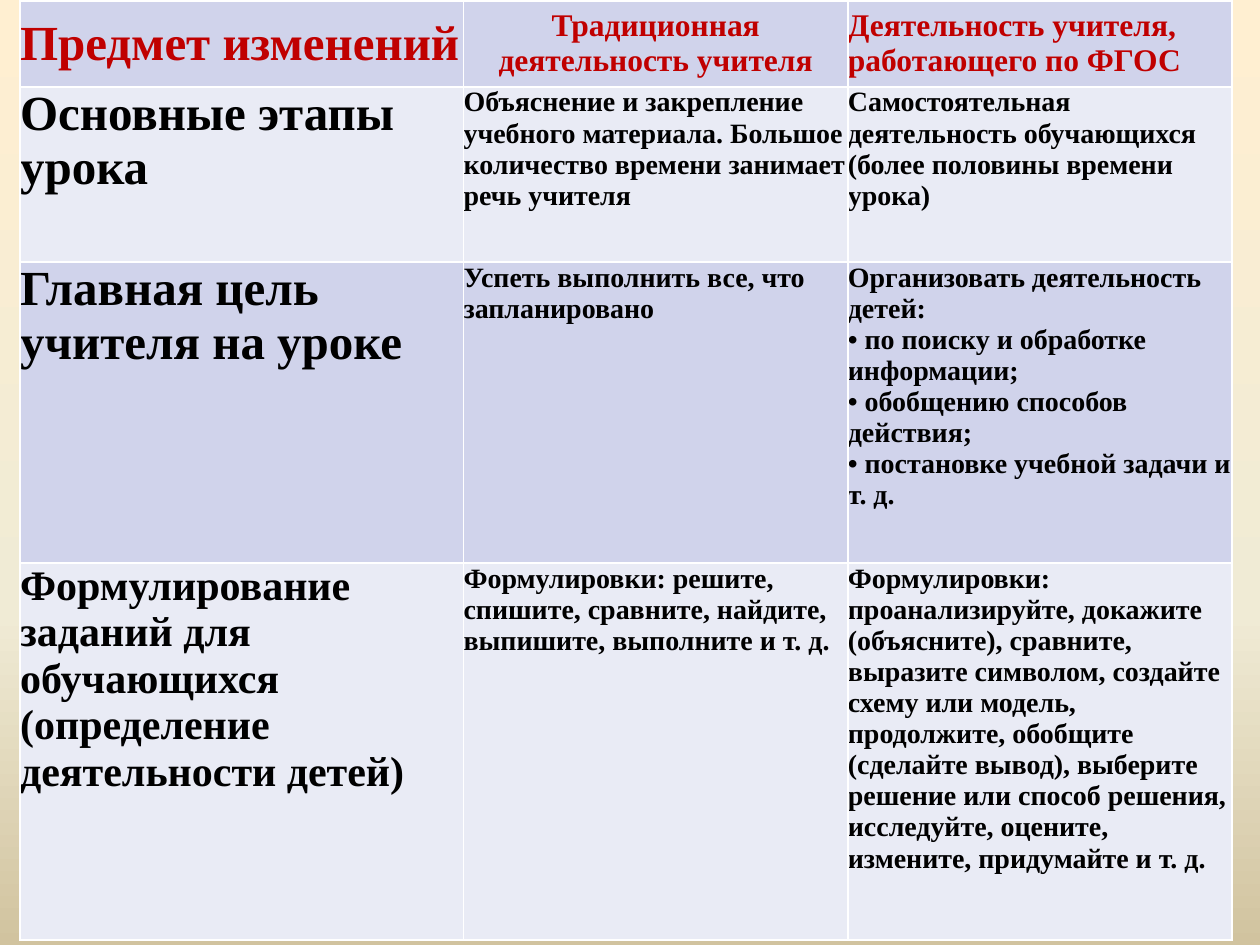
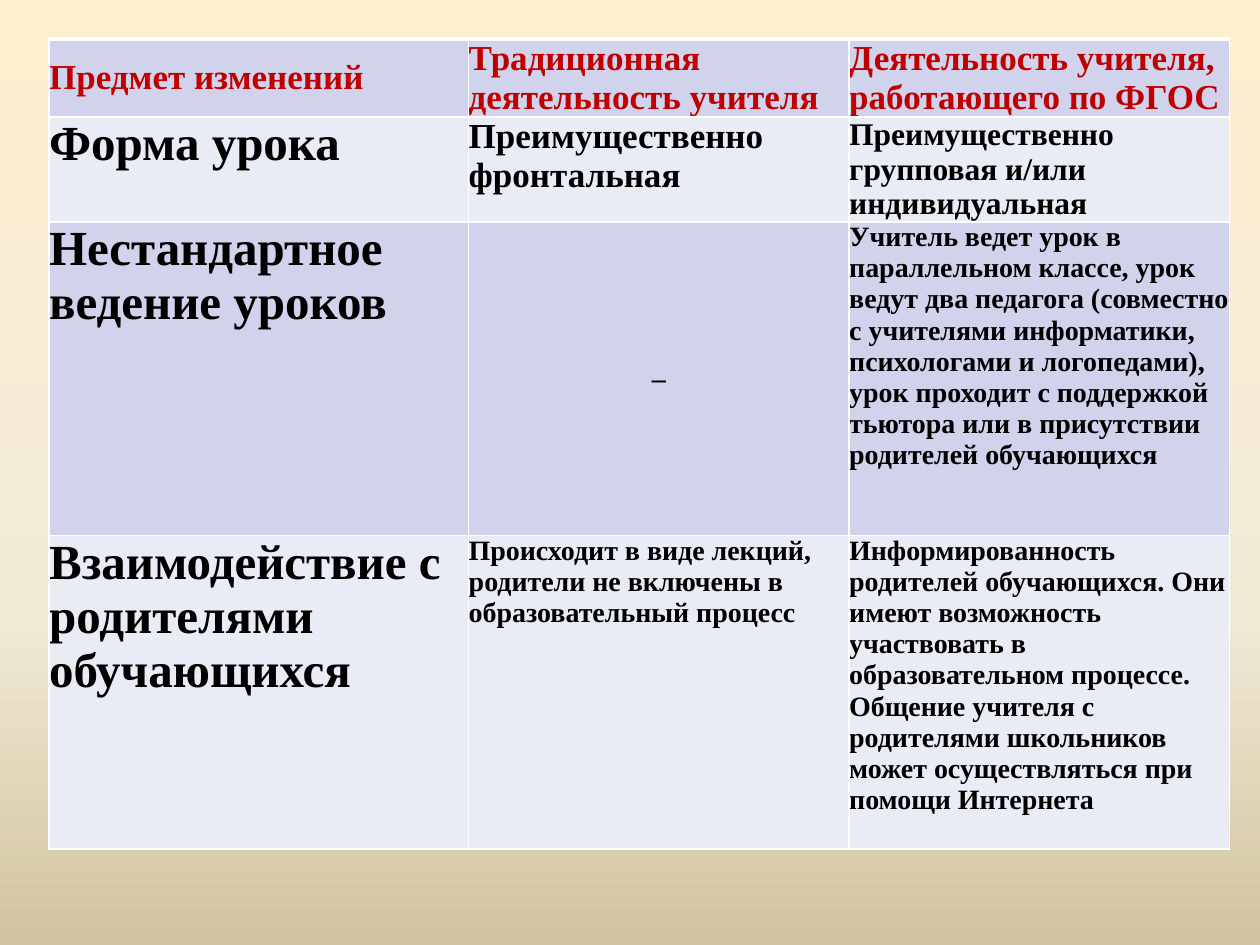
from copy import deepcopy
from dataclasses import dataclass

from pptx import Presentation
from pptx.dml.color import RGBColor
from pptx.enum.text import MSO_ANCHOR as Anchor, PP_ALIGN as Align
from pptx.oxml import parse_xml
from pptx.oxml.ns import nsdecls, qn
from pptx.util import Inches, Pt


@dataclass(frozen=True)
class Theme:
    font: str = "Times New Roman"
    header_text: str = "C00000"
    body_text: str = "000000"
    bands: tuple = ("D0D3EB", "E9EBF5")
    border: str = "FFFFFF"
    border_width: float = 1
    top_border_width: float = 3
    background: tuple = ((0, "FFEFD1"), (0.65, "F0EBD5"), (1, "D1C39F"))
    background_angle: int = 270
    label_size: int = 28
    body_size: int = 16


THEME = Theme()
HEADERS = (
    "Предмет изменений",
    "Традиционная деятельность учителя",
    "Деятельность учителя, работающего по ФГОС",
)

# "sizes" and "centred" list exceptions by (row, column); row 0 is the header.
TABLES = [
    {
        "left": 0.16, "top": 0,
        "columns": (3.52, 3.05, 3.05),
        "heights": (0.69, 1.39, 2.39, 2.99),
        "header_sizes": (28, 18, 18),
        "sizes": {(3, 0): 24},
        "centred": {(0, 1)},
        "rows": [
            ("Основные этапы урока",
             "Объяснение и закрепление учебного материала. Большое количество "
             "времени занимает речь учителя",
             "Самостоятельная деятельность обучающихся (более половины времени урока)"),
            ("Главная цель учителя на уроке",
             "Успеть выполнить все, что запланировано",
             "Организовать деятельность детей:\n"
             "• по поиску и обработке информации;\n"
             "• обобщению способов действия;\n"
             "• постановке учебной задачи и т. д."),
            ("Формулирование заданий для обучающихся (определение деятельности детей)",
             "Формулировки: решите, спишите, сравните, найдите, выпишите, "
             "выполните и т. д.",
             "Формулировки: проанализируйте, докажите (объясните), сравните, "
             "выразите символом, создайте схему или модель, продолжите, обобщите "
             "(сделайте вывод), выберите решение или способ решения, исследуйте, "
             "оцените, измените, придумайте и т. д."),
        ],
    },
    {
        "left": 0.39, "top": 0.31,
        "columns": (3.33, 3.02, 3.02),
        "heights": (0.62, 0.67, 2.49, 2.49),
        "header_sizes": (20, 20, 20),
        "sizes": {(1, 1): 20, (1, 2): 18},
        "centred": {(2, 1)},
        "rows": [
            ("Форма урока",
             "Преимущественно фронтальная",
             "Преимущественно групповая и/или индивидуальная"),
            ("Нестандартное ведение уроков",
             "–",
             "Учитель ведет урок в параллельном классе, урок ведут два педагога "
             "(совместно с учителями информатики, психологами и логопедами), урок "
             "проходит с поддержкой тьютора или в присутствии родителей обучающихся"),
            ("Взаимодействие с родителями обучающихся",
             "Происходит в виде лекций, родители не включены в образовательный процесс",
             "Информированность родителей обучающихся. Они имеют возможность "
             "участвовать в образовательном процессе. Общение учителя с родителями "
             "школьников может осуществляться при помощи Интернета"),
        ],
    },
]


def apply_formats(target, formats):
    for name, value in formats.items():
        setattr(target, name, value)


def paint_background(master):
    fill = master.background.fill
    fill.gradient()
    fill.gradient_angle = THEME.background_angle
    stop_list = next(master.element.iter(qn("a:gsLst")))
    stop_list.append(deepcopy(stop_list[-1]))
    for stop, (position, color) in zip(fill.gradient_stops, THEME.background):
        stop.position = position
        stop.color.rgb = RGBColor.from_string(color)


def add_borders(cell, is_header):
    properties = cell._tc.get_or_add_tcPr()
    for side in ("L", "R", "T", "B"):
        heavy = is_header and side == "T"
        width = Pt(THEME.top_border_width if heavy else THEME.border_width)
        properties.append(parse_xml(
            f'<a:ln{side} {nsdecls("a")} w="{width}"><a:solidFill>'
            f'<a:srgbClr val="{THEME.border}"/></a:solidFill></a:ln{side}>'))


def fill_cell(cell, text, size, row, centred):
    is_header = row == 0
    add_borders(cell, is_header)
    cell.fill.solid()
    cell.fill.fore_color.rgb = RGBColor.from_string(THEME.bands[row % 2])
    apply_formats(cell, {
        "margin_left": 0, "margin_right": 0, "margin_top": 0, "margin_bottom": 0,
        "vertical_anchor": Anchor.MIDDLE if is_header or centred else Anchor.TOP,
        "text": text,
    })
    color = THEME.header_text if is_header else THEME.body_text
    for paragraph in cell.text_frame.paragraphs:
        paragraph.alignment = Align.CENTER if centred else Align.LEFT
        for run in paragraph.runs:
            apply_formats(run.font, {"name": THEME.font, "size": Pt(size), "bold": True})
            run.font.color.rgb = RGBColor.from_string(color)


def add_comparison(slide, content):
    columns, heights = content["columns"], content["heights"]
    bounds = (content["left"], content["top"], sum(columns), sum(heights))
    table = slide.shapes.add_table(
        len(heights), len(columns), *map(Inches, bounds)).table
    apply_formats(table, {"first_row": False, "horz_banding": False})
    for column, width in zip(table.columns, columns):
        column.width = Inches(width)
    for table_row, height in zip(table.rows, heights):
        table_row.height = Inches(height)

    body_sizes = (THEME.label_size, THEME.body_size, THEME.body_size)
    for row, texts in enumerate([HEADERS, *content["rows"]]):
        row_sizes = body_sizes if row else content["header_sizes"]
        for column, text in enumerate(texts):
            place = (row, column)
            size = content["sizes"].get(place, row_sizes[column])
            fill_cell(table.cell(*place), text, size, row, place in content["centred"])


def main():
    presentation = Presentation()
    presentation.slide_width, presentation.slide_height = Inches(10), Inches(7.5)
    paint_background(presentation.slide_master)
    blank = presentation.slide_layouts[6]
    for content in TABLES:
        add_comparison(presentation.slides.add_slide(blank), content)
    presentation.save("out.pptx")


if __name__ == "__main__":
    main()
